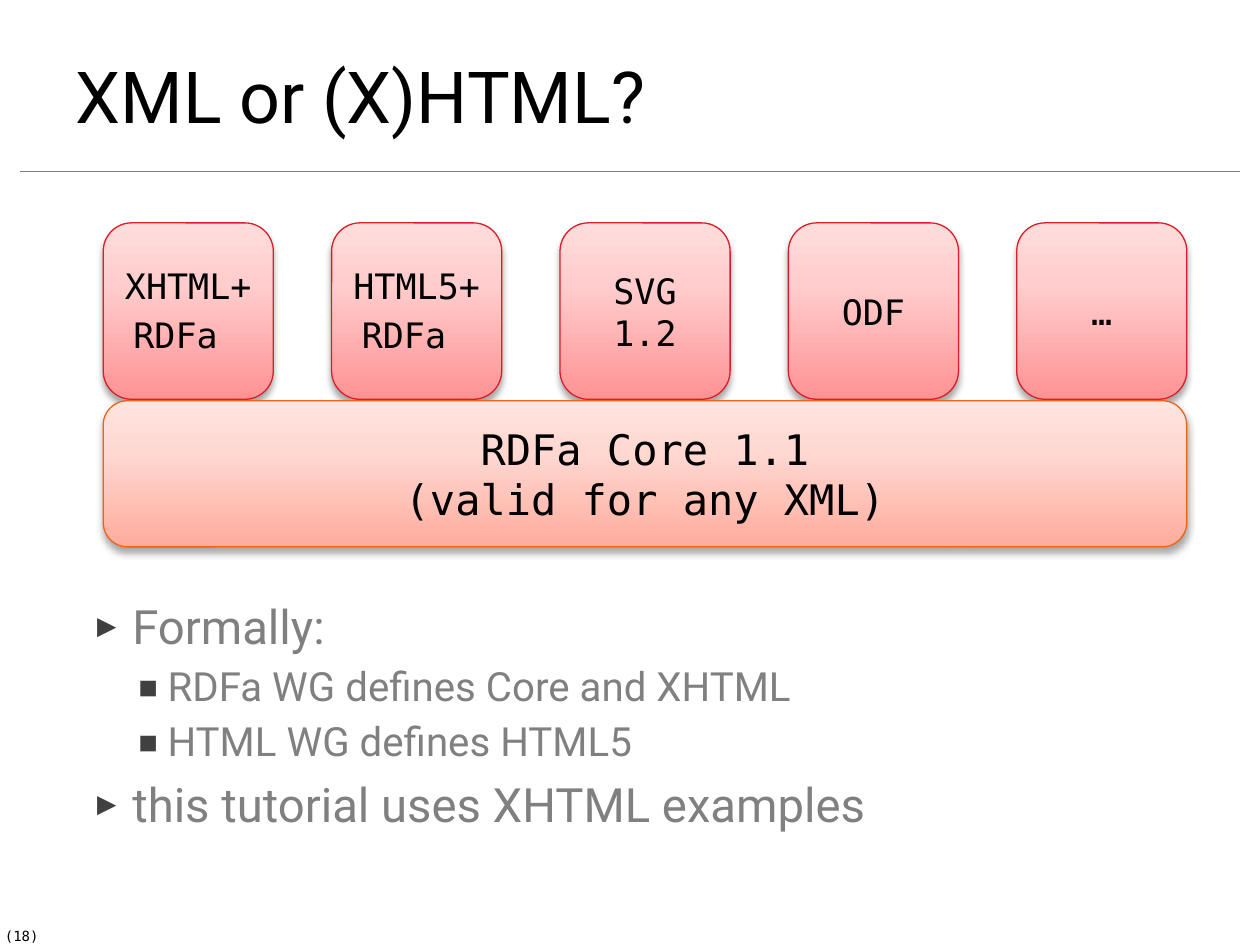
from lxml import etree
from pptx import Presentation
from pptx.dml.color import RGBColor
from pptx.enum import shapes, text
from pptx.oxml.ns import qn
from pptx.util import Pt

BLACK = RGBColor(0, 0, 0)
GREY = RGBColor(0x80, 0x80, 0x80)
RED = RGBColor(0xDA, 0x1F, 0x28)
ORANGE = RGBColor(0xEB, 0x64, 0x1B)
BULLET = "404040"
REDS = [(0, "FF9294"), (65, "FFCDCD"), (100, "FFDCDC")]
ORANGES = [(0, "FFAC9C"), (65, "FFD8D2"), (100, "FFE4DF")]
SANS, MONO = "Roboto", "DejaVu Sans Mono"

TITLE = "XML or (X)HTML?"
PAGE = "(18)"
HOSTS = [["XHTML+RDFa"], ["HTML5+RDFa"], ["SVG", "1.2"], ["ODF"], ["…"]]
CORE = ["RDFa Core 1.1", "(valid for any XML)"]
POINTS = [(0, "Formally:"), (1, "RDFa WG defines Core and XHTML"),
          (1, "HTML WG defines HTML5"), (0, "this tutorial uses XHTML examples")]
# Per level: left margin, indent, space before, text size, bullet, bullet size
LEVELS = [(28.8, -20.16, 6, 27, "▶", 68), (48.96, -18, 4, 23, "▪", 100)]

LEFT, WIDTH = 59, 619.2
HOST_TOP, HOST_W, HOST_H = 127.4, 97.2, 100.8
CORE_TOP, CORE_H = 229, 83.5


def add(parent, tag, **attrs):
    return etree.SubElement(parent, qn(tag), {k: str(v) for k, v in attrs.items()})


def put(par, words, size, font=MONO, color=BLACK, align=None):
    run = par.add_run()
    run.text = words
    run.font.size, run.font.name = Pt(size), font
    run.font.color.rgb = color
    if align is not None:
        par.alignment = align


def place(shape, left, top, width, height):
    shape.left, shape.top = Pt(left), Pt(top)
    shape.width, shape.height = Pt(width), Pt(height)


def block(group, left, top, width, height, lines, size, stops, edge):
    """Add a rounded box with a gradient, a soft shadow and centred lines."""
    box = group.shapes.add_shape(shapes.MSO_SHAPE.ROUNDED_RECTANGLE,
                                 Pt(left), Pt(top), Pt(width), Pt(height))
    box.fill.gradient()
    box.fill.gradient_angle = 90
    ramp = box.element.spPr.find(".//" + qn("a:gsLst"))
    for old in list(ramp):
        ramp.remove(old)
    for pos, tone in stops:
        add(add(ramp, "a:gs", pos=pos * 1000), "a:srgbClr", val=tone)
    box.line.color.rgb, box.line.width = edge, Pt(0.75)

    box.shadow.inherit = False
    glow = add(box.element.spPr.find(qn("a:effectLst")), "a:outerShdw",
               blurRad=Pt(4), dist=Pt(3), dir=5400000, rotWithShape=0)
    add(add(glow, "a:srgbClr", val="000000"), "a:alpha", val=35000)

    frame = box.text_frame
    frame.vertical_anchor = text.MSO_ANCHOR.MIDDLE
    for i, words in enumerate(lines):
        par = frame.add_paragraph() if i else frame.paragraphs[0]
        put(par, words, size, align=text.PP_ALIGN.CENTER)
    return frame


def main():
    deck = Presentation()
    deck.slide_width, deck.slide_height = Pt(720), Pt(540)
    slide = deck.slides.add_slide(deck.slide_layouts[1])

    note = slide.shapes.add_textbox(Pt(-4.3), Pt(526.3), Pt(34), Pt(16.6))
    note.text_frame.word_wrap = False
    put(note.text_frame.paragraphs[0], PAGE, 8)

    rule = slide.shapes.add_connector(shapes.MSO_CONNECTOR.STRAIGHT,
                                      Pt(11.5), Pt(98), Pt(708.5), Pt(98))
    rule.line.color.rgb, rule.line.width = GREY, Pt(1)
    add(rule.element.spPr, "a:effectLst")

    title, body = slide.placeholders
    place(title, 36, 18, 648, 72)
    title.text_frame.auto_size = text.MSO_AUTO_SIZE.NONE
    title.text_frame.vertical_anchor = text.MSO_ANCHOR.MIDDLE
    put(title.text_frame.paragraphs[0], TITLE, 41, SANS, align=text.PP_ALIGN.LEFT)

    place(body, 39.6, 337.7, 648, 146.2)
    frame = body.text_frame
    frame.auto_size = text.MSO_AUTO_SIZE.NONE
    for i, (level, words) in enumerate(POINTS):
        margin, indent, before, size, mark, scale = LEVELS[level]
        par = frame.add_paragraph() if i else frame.paragraphs[0]
        par.level = level
        par.space_before = Pt(before if i else 0)
        props = par._p.get_or_add_pPr()
        props.set("marL", str(Pt(margin)))
        props.set("indent", str(Pt(indent)))
        add(add(props, "a:buClr"), "a:srgbClr", val=BULLET)
        add(props, "a:buSzPct", val=scale * 1000)
        add(props, "a:buFont", typeface=MONO)
        add(props, "a:buChar", char=mark)
        put(par, words, size, SANS, GREY)

    stack = slide.shapes.add_group_shape()
    step = (WIDTH - HOST_W) / (len(HOSTS) - 1)
    for i, lines in enumerate(HOSTS):
        host = block(stack, LEFT + i * step, HOST_TOP, HOST_W, HOST_H,
                     lines, 20, REDS, RED)
        if lines[0].endswith("+RDFa"):
            put(host.paragraphs[0], " ", 24)
    block(stack, LEFT, CORE_TOP, WIDTH, CORE_H, CORE, 24, ORANGES, ORANGE)

    deck.save("out.pptx")


if __name__ == "__main__":
    main()
